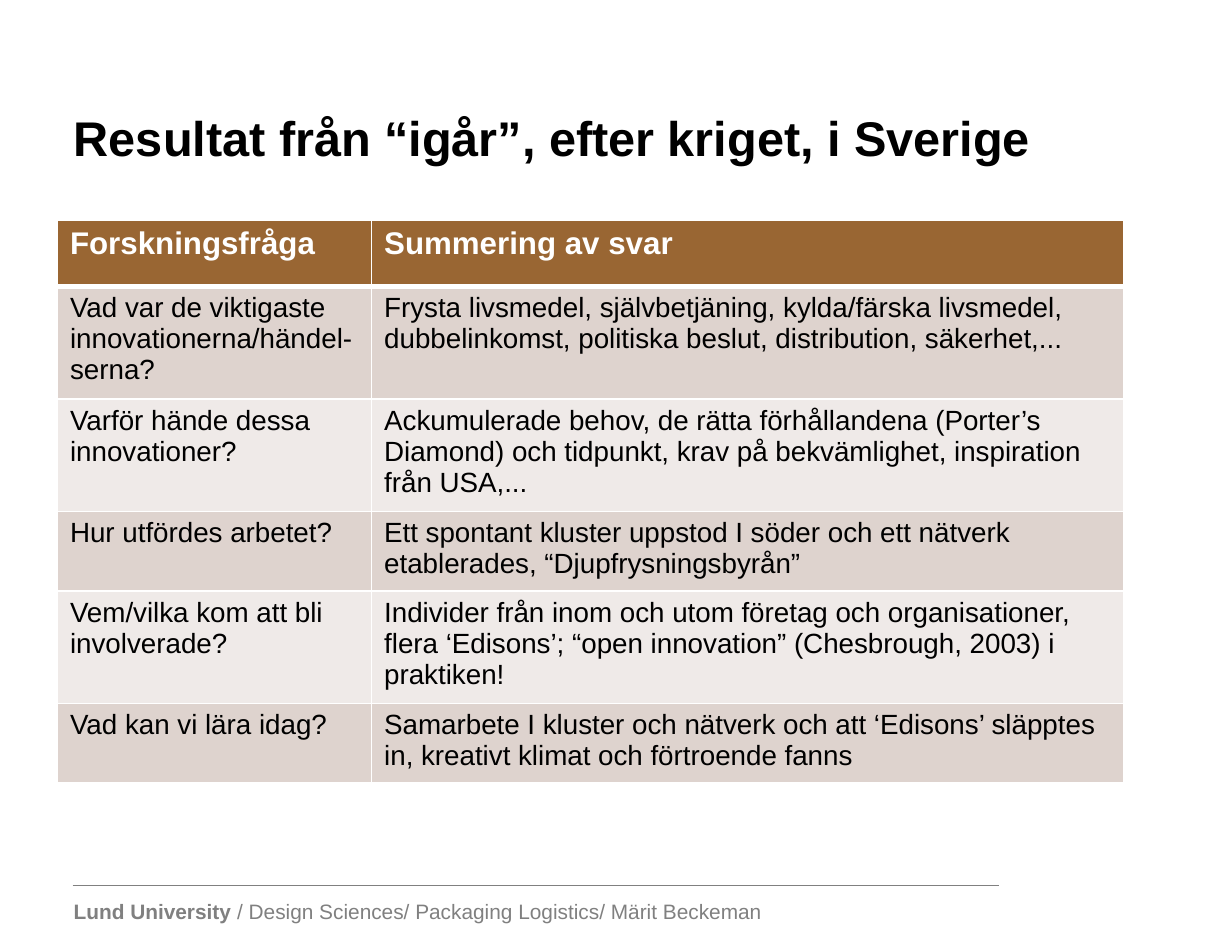
"""Build a slide with a table of research questions and summarised answers."""
from lxml import etree
from pptx import Presentation
from pptx.dml.color import RGBColor
from pptx.enum.shapes import MSO_CONNECTOR
from pptx.enum.text import MSO_ANCHOR, PP_ALIGN
from pptx.oxml.ns import qn
from pptx.util import Inches, Pt

STRAIGHT = MSO_CONNECTOR.STRAIGHT
MIDDLE = MSO_ANCHOR.MIDDLE
LEFT = PP_ALIGN.LEFT
FONT = "Arial"
BLACK, WHITE, GREY = "000000", "FFFFFF", "808080"
BROWN, DARK_BAND, LIGHT_BAND = "996633", "DED3CE", "EFEAE8"
UNITS_PER_INCH = 576

ROWS = [
    ("Forskningsfråga", "Summering av svar"),
    ("Vad var de viktigaste innovationerna/händel-serna?",
     "Frysta livsmedel, självbetjäning, kylda/färska livsmedel, "
     "dubbelinkomst, politiska beslut, distribution, säkerhet,..."),
    ("Varför hände dessa innovationer?",
     "Ackumulerade behov, de rätta förhållandena (Porter’s Diamond) och "
     "tidpunkt, krav på bekvämlighet, inspiration från USA,..."),
    ("Hur utfördes arbetet?",
     "Ett spontant kluster uppstod I söder och ett nätverk etablerades, "
     "“Djupfrysningsbyrån”"),
    ("Vem/vilka kom att bli involverade?",
     "Individer från inom och utom företag och organisationer, flera "
     "‘Edisons’; “open innovation” (Chesbrough, 2003) i praktiken!"),
    ("Vad kan vi lära idag?",
     "Samarbete I kluster och nätverk och att ‘Edisons’ släpptes in, "
     "kreativt klimat och förtroende fanns"),
]
COLUMN_WIDTHS = [2.51, 6.01]
ROW_HEIGHTS = [0.53, 0.87, 0.87, 0.61, 0.87, 0.61]


def color(hex_string):
    return RGBColor.from_string(hex_string)


def style(font, size, hex_string, bold=False):
    font.name = FONT
    font.size = Pt(size)
    font.bold = bold
    font.color.rgb = color(hex_string)


presentation = Presentation()
presentation.slide_width = Inches(5670 / UNITS_PER_INCH)
presentation.slide_height = Inches(4309 / UNITS_PER_INCH)
slide = presentation.slides.add_slide(presentation.slide_layouts[5])

footer = slide.shapes.add_textbox(Inches(0.49), Inches(7.13), Inches(5.75), Inches(0.3))
footer.text_frame.word_wrap = False
footer_paragraph = footer.text_frame.paragraphs[0]
footer_paragraph.alignment = LEFT
for text, bold in [
    ("Lund University ", True),
    ("/ Design Sciences/ Packaging Logistics/ Märit Beckeman", False),
]:
    run = footer_paragraph.add_run()
    run.text = text
    style(run.font, 12, GREY, bold)

footer_line = slide.shapes.add_connector(
    STRAIGHT, Inches(0.58), Inches(7.08), Inches(7.98), Inches(7.08))
footer_line.line.color.rgb = color(GREY)
footer_line.line.width = Pt(0.5)
etree.SubElement(footer_line._element.spPr, qn("a:effectLst"))

title = slide.shapes.title
title.left, title.top = Inches(0.49), Inches(0.38)
title.width, title.height = Inches(8.86), Inches(1.43)
title.text_frame.text = "Resultat från “igår”, efter kriget, i Sverige"
title.text_frame.vertical_anchor = MIDDLE
title_paragraph = title.text_frame.paragraphs[0]
title_paragraph.alignment = LEFT
style(title_paragraph.font, 28, BLACK, True)

table = slide.shapes.add_table(
    len(ROWS), len(COLUMN_WIDTHS), Inches(0.46), Inches(1.76),
    Inches(sum(COLUMN_WIDTHS)), Inches(sum(ROW_HEIGHTS))).table
for column, width in zip(table.columns, COLUMN_WIDTHS):
    column.width = Inches(width)

for row_index, (height, texts) in enumerate(zip(ROW_HEIGHTS, ROWS)):
    table.rows[row_index].height = Inches(height)
    is_header = row_index == 0
    band = DARK_BAND if row_index % 2 else LIGHT_BAND
    size = 18 if is_header else 16
    border_widths = {
        "a:lnL": 1,
        "a:lnR": 1,
        "a:lnT": 3 if row_index == 1 else 1,
        "a:lnB": 3 if is_header else 1,
    }
    for column_index, text in enumerate(texts):
        cell = table.cell(row_index, column_index)
        cell.text = text
        paragraph = cell.text_frame.paragraphs[0]
        style(paragraph.runs[0].font, size, WHITE if is_header else BLACK, is_header)
        etree.SubElement(paragraph._p, qn("a:endParaRPr"), sz=str(size * 100))
        properties = cell._tc.get_or_add_tcPr()
        for tag, width in border_widths.items():
            border = etree.SubElement(properties, qn(tag), w=str(Pt(width)))
            border_fill = etree.SubElement(border, qn("a:solidFill"))
            etree.SubElement(border_fill, qn("a:srgbClr"), val=WHITE)
        cell.fill.solid()
        cell.fill.fore_color.rgb = color(BROWN if is_header else band)

presentation.save("out.pptx")
